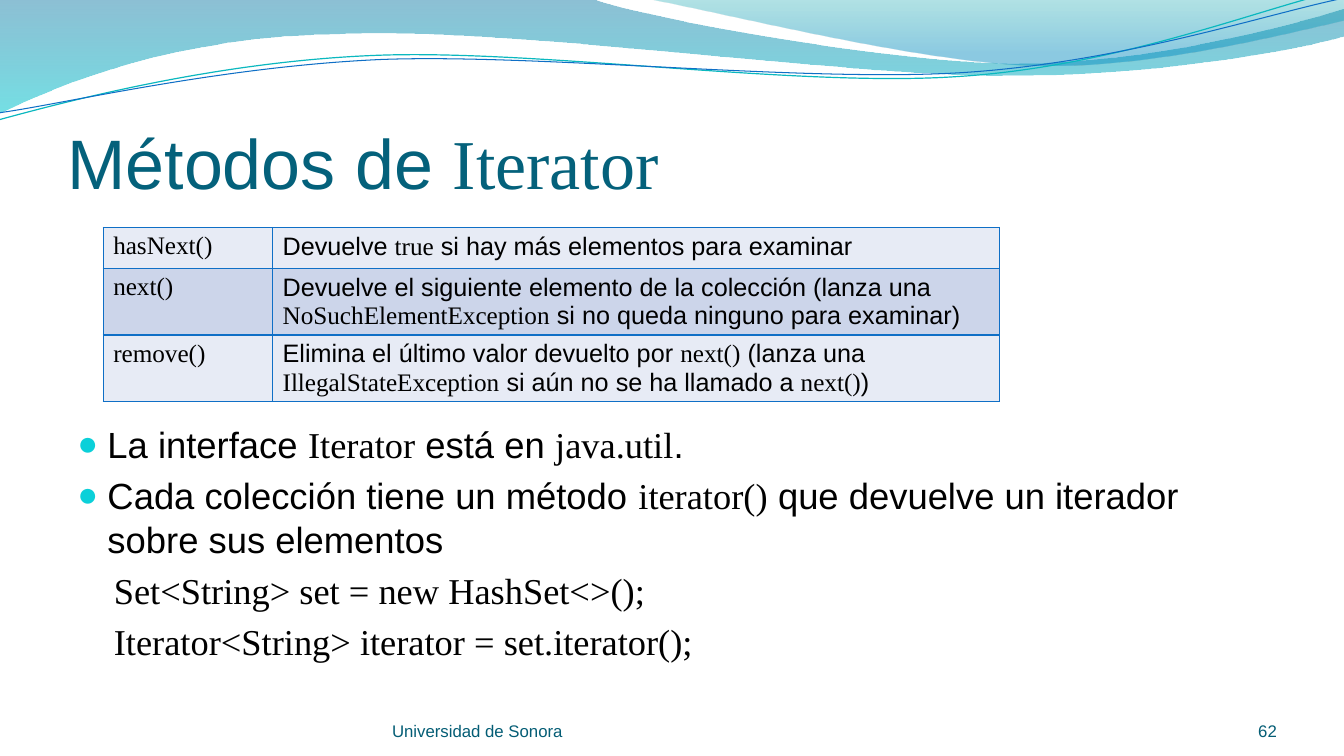
"""Build a slide on the methods of Iterator, with a table and code bullets."""
from lxml.etree import SubElement
from pptx import Presentation
from pptx.dml.color import RGBColor
from pptx.enum.text import MSO_ANCHOR as Anchor, MSO_AUTO_SIZE as AutoSize, PP_ALIGN as Align
from pptx.oxml import parse_xml
from pptx.oxml.ns import nsdecls, qn
from pptx.util import Cm, Pt

COLORS = {
    "text": "000000", "title": "04617B", "footer": "045D75", "bullet": "0BD0D9",
    "border": "0F6FC6", "teal_line": "0AB8BF", "light_row": "E7EBF5", "dark_row": "CCD5EA",
}
TEXT_FONT, CODE_FONT = "Arial", "Times New Roman"
UNITS_PER_CM = 100

BACK_WAVE = [
    [(0, 0)], [(14.91, -0.03)],
    [(16.1, 0.43), (22.48, 1.6), (25.68, 1.6)],
    [(28.91, 1.6), (32.46, 0.66), (33.86, 0.23)],
    [(33.91, 0.91)],
    [(33.3, 1.12), (29.46, 1.93), (25.25, 1.91)],
    [(21.06, 1.91), (12.93, 0.71), (8.71, 0.86)],
    [(4.37, 0.91), (1.55, 2.11), (-0.03, 2.87)],
]
FRONT_WAVE = [
    [(16.23, -0.03)],
    [(18.03, 0.28), (23.09, 1.57), (26.04, 1.65)],
    [(28.98, 1.75), (32.56, 0.81), (33.86, 0.53)],
    [(33.86, 0)],
]
TEAL_CURVE = [
    [(-0.03, 3.02)],
    [(1.63, 2.57), (5.36, 1.57), (9.37, 1.4)],
    [(13.39, 1.22), (20.07, 2.21), (24.13, 1.93)],
    [(28.19, 1.68), (31.8, 0.2), (33.81, -0.25)],
]
BLUE_CURVE = [
    [(0, 2.84)],
    [(1.6, 2.62), (5.54, 1.68), (9.6, 1.5)],
    [(13.61, 1.35), (20.22, 2.08), (24.26, 1.83)],
    [(28.32, 1.57), (31.88, 0.36), (33.88, -0.05)],
]
METHODS = [
    ("`hasNext()`", "Devuelve `true` si hay más elementos para examinar"),
    ("`next()`", "Devuelve el siguiente elemento de la colección (lanza una "
                 "`NoSuchElementException` si no queda ninguno para examinar)"),
    ("`remove()`", "Elimina el último valor devuelto por `next()` (lanza una "
                   "`IllegalStateException` si aún no se ha llamado a `next()`)"),
]
BULLETS = [
    "La interface `Iterator` está en `java.util`.",
    "Cada colección tiene un método `iterator()` que devuelve un iterador sobre sus elementos",
]
CODE_LINES = [
    "`Set<String> set = new HashSet<>();`",
    "`Iterator<String> iterator = set.iterator();`",
]


def color(name):
    return RGBColor.from_string(COLORS[name])


def to_units(point):
    return tuple(round(value * UNITS_PER_CM) for value in point)


def bend_segments(shape, segments, origin):
    lines = list(shape._element.iter(qn("a:lnTo")))
    for line, segment in zip(lines, segments[1:]):
        if len(segment) == 3:
            points = "".join(
                f'<a:pt x="{x - origin[0]}" y="{y - origin[1]}"/>' for x, y in map(to_units, segment))
            line.getparent().replace(line, parse_xml(
                f'<a:cubicBezTo {nsdecls("a")}>{points}</a:cubicBezTo>'))


def add_outline(slide, segments, closed):
    anchors = [to_units(segment[-1]) for segment in segments]
    builder = slide.shapes.build_freeform(*anchors[0], scale=Cm(1) / UNITS_PER_CM)
    builder.add_line_segments(anchors[1:], close=closed)
    shape = builder.convert_to_shape()
    bend_segments(shape, segments, [min(axis) for axis in zip(*anchors)])
    shape.shadow.inherit = False
    shape.fill.background()
    return shape


def add_wave(slide, segments, stops):
    shape = add_outline(slide, segments, True)
    shape.line.fill.background()
    stop_xml = "".join(
        f'<a:gs pos="{position * 1000}"><a:srgbClr val="{value}">'
        f'<a:alpha val="{alpha * 1000}"/></a:srgbClr></a:gs>'
        for position, value, alpha in stops)
    properties = shape._element.spPr
    properties.replace(properties.find(qn("a:noFill")), parse_xml(
        f'<a:gradFill {nsdecls("a")}><a:gsLst>{stop_xml}</a:gsLst>'
        '<a:lin ang="5400000" scaled="0"/></a:gradFill>'))


def add_curve(slide, segments, color_name, width):
    line = add_outline(slide, segments, False).line
    line.color.rgb = color(color_name)
    line.width = Pt(width)


def write(paragraph, text, size, color_name):
    paragraph.font.size = Pt(size)
    paragraph.font.color.rgb = color(color_name)
    for index, part in enumerate(text.split("`")):
        if part:
            run = paragraph.add_run()
            run.text = part
            run.font.name = CODE_FONT if index % 2 else TEXT_FONT


def prepare_frame(shape, anchor):
    frame = shape.text_frame
    frame.word_wrap = True
    frame.auto_size = AutoSize.NONE
    frame.vertical_anchor = anchor
    frame.margin_left = frame.margin_right = frame.margin_top = frame.margin_bottom = 0
    return frame


def add_title(slide, text):
    title = slide.shapes.title
    title.left, title.top, title.width, title.height = Cm(1.7), Cm(1.96), Cm(30.48), Cm(3.18)
    frame = prepare_frame(title, Anchor.BOTTOM)
    frame.paragraphs[0].alignment = Align.LEFT
    write(frame.paragraphs[0], text, 50, "title")


def add_footer(slide, text, left, width, alignment):
    box = slide.shapes.add_textbox(Cm(left), Cm(17.65), Cm(width), Cm(1.02))
    paragraph = prepare_frame(box, Anchor.BOTTOM).paragraphs[0]
    paragraph.alignment = alignment
    write(paragraph, text, 12, "footer")


def indent(paragraph, margin, bulleted):
    properties = paragraph._p.get_or_add_pPr()
    properties.set("marL", str(Cm(margin)))
    if bulleted:
        properties.set("indent", str(-Cm(margin)))
        bullet_color = SubElement(properties, qn("a:buClr"))
        SubElement(bullet_color, qn("a:srgbClr")).set("val", COLORS["bullet"])
        SubElement(properties, qn("a:buSzPct")).set("val", "95000")
        SubElement(properties, qn("a:buFont")).set("typeface", TEXT_FONT)
        SubElement(properties, qn("a:buChar")).set("char", "●")


def add_body(slide):
    box = slide.shapes.add_textbox(Cm(1.7), Cm(5.38), Cm(30.48), Cm(12.19))
    frame = prepare_frame(box, Anchor.TOP)
    frame.margin_left = frame.margin_right = Cm(0.25)
    frame.margin_top = Cm(5.26)
    for index, text in enumerate(BULLETS + CODE_LINES):
        paragraph = frame.add_paragraph() if index else frame.paragraphs[0]
        bulleted = index < len(BULLETS)
        indent(paragraph, 0.76 if bulleted else 0.92, bulleted)
        paragraph.space_before = Pt(5.2 if index else 0)
        write(paragraph, text, 26, "text")


def add_borders(cell):
    properties = cell._tc.get_or_add_tcPr()
    for position, side in enumerate(("lnL", "lnR", "lnT", "lnB")):
        properties.insert(position, parse_xml(
            f'<a:{side} {nsdecls("a")} w="12700"><a:solidFill>'
            f'<a:srgbClr val="{COLORS["border"]}"/></a:solidFill></a:{side}>'))


def add_methods_table(slide):
    table = slide.shapes.add_table(len(METHODS), 2, Cm(2.6), Cm(5.73), Cm(22.58), Cm(4.4)).table
    for column, width in zip(table.columns, (4.27, 18.31)):
        column.width = Cm(width)
    for row_index, (row, height) in enumerate(zip(table.rows, (1.03, 1.68, 1.68))):
        row.height = Cm(height)
        for cell, text in zip(row.cells, METHODS[row_index]):
            cell.fill.solid()
            cell.fill.fore_color.rgb = color("dark_row" if row_index % 2 else "light_row")
            add_borders(cell)
            write(cell.text_frame.paragraphs[0], text, 18, "text")


def main():
    presentation = Presentation()
    presentation.slide_width, presentation.slide_height = Cm(33.87), Cm(19.05)
    slide = presentation.slides.add_slide(presentation.slide_layouts[5])
    add_wave(slide, BACK_WAVE, [(0, "0074A1", 45), (100, "00C6CF", 55)])
    add_wave(slide, FRONT_WAVE, [(0, "00A1A9", 30), (80, "008BBF", 45)])
    add_curve(slide, TEAL_CURVE, "teal_line", 0.85)
    add_curve(slide, BLUE_CURVE, "border", 0.75)
    add_title(slide, "Métodos de `Iterator`")
    add_body(slide)
    add_footer(slide, "Universidad de Sonora", 9.88, 12.42, Align.LEFT)
    add_footer(slide, "62", 29.36, 2.82, Align.RIGHT)
    add_methods_table(slide)
    presentation.save("out.pptx")


if __name__ == "__main__":
    main()
